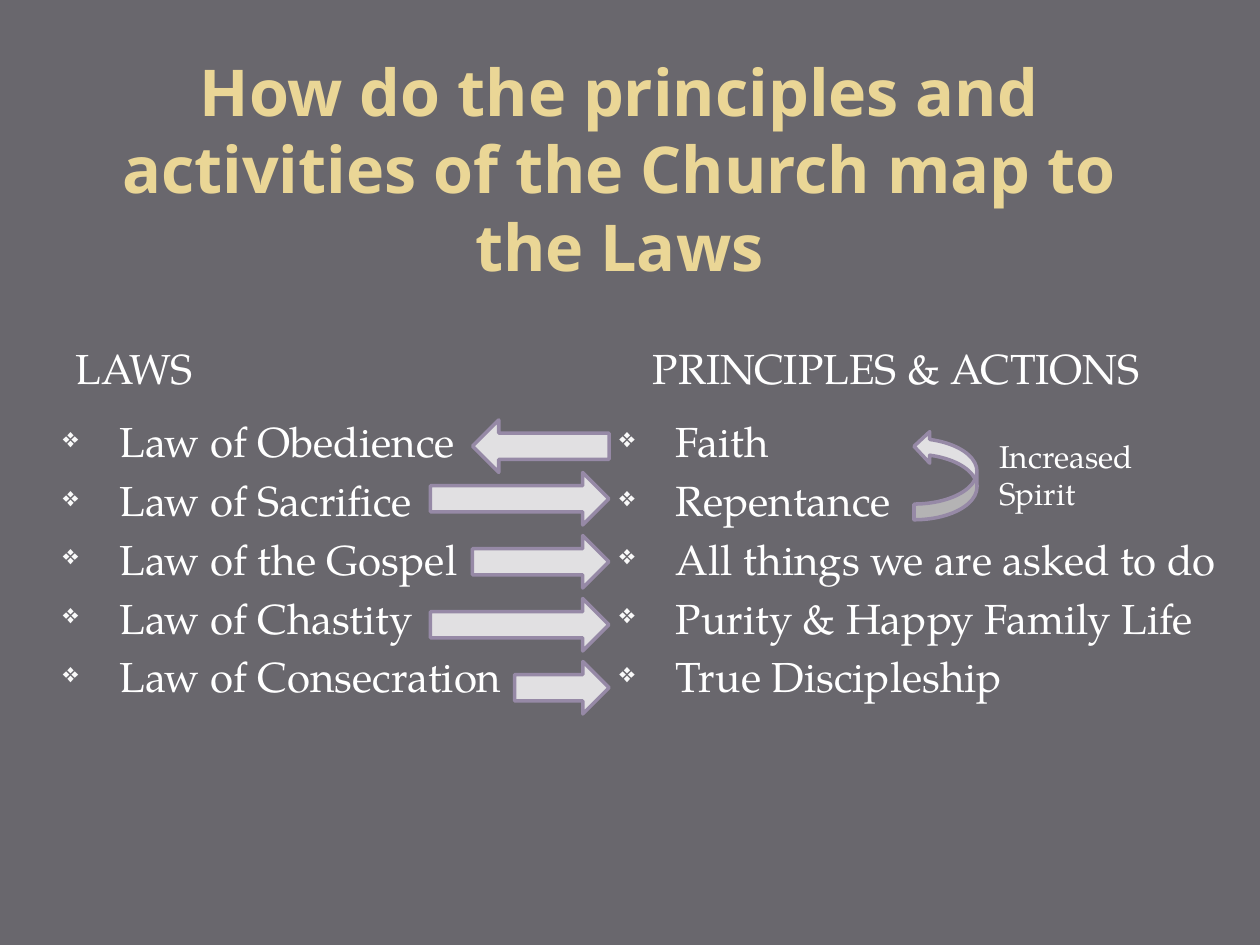
from lxml.etree import SubElement
from pptx import Presentation
from pptx.dml.color import RGBColor
from pptx.enum.shapes import MSO_SHAPE
from pptx.enum.text import MSO_ANCHOR, PP_ALIGN
from pptx.oxml.ns import qn
from pptx.util import Inches, Pt

BACKGROUND = RGBColor(0x69, 0x67, 0x6D)
GOLD = RGBColor(0xEA, 0xD6, 0x96)
WHITE = RGBColor(0xFF, 0xFF, 0xFF)
ARROW_FILL = RGBColor(0xE1, 0xE0, 0xE2)
ARROW_LINE = RGBColor(0x96, 0x89, 0xA6)
BULLET = RGBColor(0xF9, 0xF9, 0xF9)
HEADING_FONT = "Noto Sans"
BODY_FONT = "TeX Gyre Pagella"
COLUMNS, ROWS = 120, 90
ARROW_TIP, ARROW_THICKNESS = 58, 5

LAWS = ["Law of Obedience", "Law of Sacrifice", "Law of the Gospel",
        "Law of Chastity", "Law of Consecration"]
PRINCIPLES = ["Faith", "Repentance", "All things we are asked to do",
              "Purity & Happy Family Life", "True Discipleship"]
MAPPINGS = [(42.5, 13, 90), (47.5, 17, 270), (53.5, 13, 270),
            (59.5, 17, 270), (65.5, 9, 270)]


class LawsSlide:
    """Holds the style and the current slide, placed on a grid of columns and rows."""

    def __init__(self, deck):
        self.column = deck.slide_width / COLUMNS
        self.row = deck.slide_height / ROWS
        self.slide = deck.slides.add_slide(deck.slide_layouts[6])
        self.slide.background.fill.solid()
        self.slide.background.fill.fore_color.rgb = BACKGROUND

    def place(self, left, top, width, height):
        return (round(left * self.column), round(top * self.row),
                round(width * self.column), round(height * self.row))

    def text(self, box, lines, size=24, font=BODY_FONT, color=WHITE, bold=False,
             anchor=MSO_ANCHOR.TOP, align=PP_ALIGN.LEFT, before=0, wrap=True):
        frame = self.slide.shapes.add_textbox(*self.place(*box)).text_frame
        frame.text = "\n".join(lines)
        frame.word_wrap = wrap
        frame.vertical_anchor = anchor
        for paragraph in frame.paragraphs:
            paragraph.alignment = align
            paragraph.space_before = Pt(before)
            style = paragraph.runs[0].font
            style.name, style.size, style.bold = font, Pt(size), bold
            style.color.rgb = color
        return frame

    def title(self, box, wording):
        self.text(box, [wording], 36.9, HEADING_FONT, GOLD, True,
                  MSO_ANCHOR.MIDDLE, PP_ALIGN.CENTER)

    def heading(self, box, wording):
        self.text(box, [wording], anchor=MSO_ANCHOR.MIDDLE, before=4.8)

    def bullets(self, box, items):
        for paragraph in self.text(box, items, before=4.8).paragraphs:
            properties = paragraph._p.get_or_add_pPr()
            properties.set("marL", str(Inches(0.6)))
            properties.set("indent", str(Inches(-0.45)))
            tint = SubElement(properties, qn("a:buClr"))
            SubElement(tint, qn("a:srgbClr"), val=str(BULLET))
            SubElement(properties, qn("a:buSzPct"), val="65000")
            SubElement(properties, qn("a:buChar"), char="❖")

    def arrow(self, preset, box, rotation):
        arrow = self.slide.shapes.add_shape(preset, *self.place(*box))
        arrow.rotation = rotation
        arrow.shadow.inherit = False
        arrow.fill.solid()
        arrow.fill.fore_color.rgb = ARROW_FILL
        arrow.line.color.rgb = ARROW_LINE
        arrow.line.width = Pt(2)

    def mapping(self, middle, length, rotation):
        left = ARROW_TIP - (length + ARROW_THICKNESS) / 2
        box = (left, middle - length / 2, ARROW_THICKNESS, length)
        self.arrow(MSO_SHAPE.DOWN_ARROW, box, rotation)


def main():
    deck = Presentation()
    deck.slide_width, deck.slide_height = Inches(10), Inches(7.5)
    page = LawsSlide(deck)
    page.title((5, 5, 108, 22),
               "How do the principles and activities of the Church map to the Laws")
    page.heading((6, 30.1, 53, 9.8), "LAWS")
    page.heading((61, 30.1, 53, 9.8), "PRINCIPLES & ACTIONS")
    page.bullets((3, 39, 53, 49.5), LAWS)
    page.bullets((56, 39, 64, 51), PRINCIPLES)
    for mapping in MAPPINGS:
        page.mapping(*mapping)
    page.arrow(MSO_SHAPE.CURVED_UP_ARROW, (85.8, 42.25, 8.5, 6), 270)
    page.text((94, 41, 16, 8.5), ["Increased", "Spirit"], size=18, wrap=False)
    deck.save("out.pptx")


if __name__ == "__main__":
    main()
